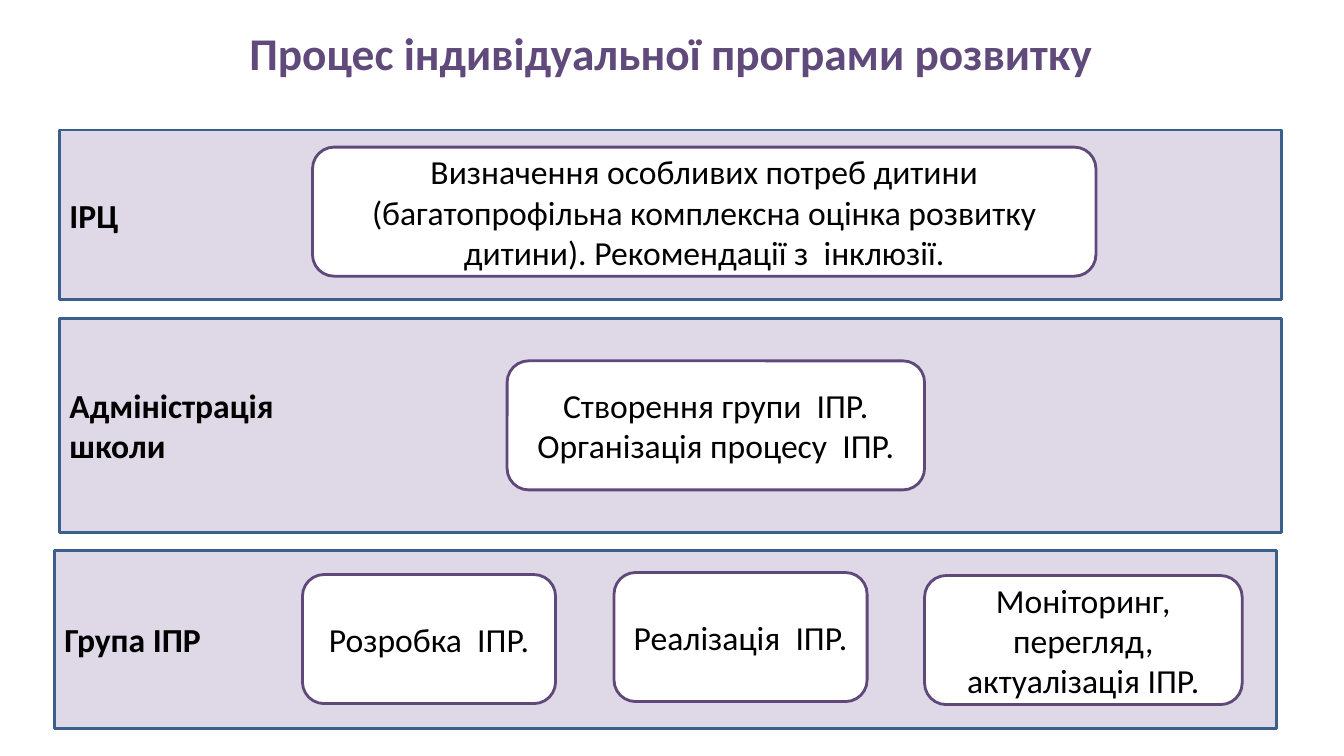
from pptx import Presentation
from pptx import util as u
from pptx.dml import color
from pptx.enum import shapes, text

EMU_PER_PX = 9144
TITLE = "604A7B"
INK = "000000"
BAND_FILL, BAND_LINE = "DFD8E7", "3A5F8C"
STEP_FILL, STEP_LINE = "FFFFFF", "5F497A"
BAND_WIDTH = 1212
STEP_HEIGHT = 128

BANDS = [
    (59, 129, 168, ["ІРЦ"]),
    (59, 316, 212, ["Адміністрація", "школи"]),
    (54, 546, 177, ["Група ІПР"]),
]
STEPS = [
    (310, 146, 777, ["Визначення особливих потреб дитини (багатопрофільна "
                     "комплексна оцінка розвитку дитини). Рекомендації з  інклюзії."]),
    (503, 358, 414, ["Створення групи  ІПР.", "Організація процесу  ІПР."]),
    (300, 570, 251, ["Розробка  ІПР."]),
    (609, 568, 251, ["Реалізація  ІПР."]),
    (917, 571, 315, ["Моніторинг, перегляд, актуалізація ІПР."]),
]


def px(*lengths):
    return [u.Emu(length * EMU_PER_PX) for length in lengths]


def rgb(value):
    return color.RGBColor.from_string(value)


def write(shape, lines, align, **font):
    frame = shape.text_frame
    frame.word_wrap = True
    frame.vertical_anchor = text.MSO_ANCHOR.MIDDLE
    style = {"name": "Calibri", "size": u.Pt(24), "bold": False} | font
    ink = style.pop("ink", INK)
    for index, line in enumerate(lines):
        para = frame.add_paragraph() if index else frame.paragraphs[0]
        para.alignment = align
        span = para.add_run()
        span.text = line
        for key, value in style.items():
            setattr(span.font, key, value)
        span.font.color.rgb = rgb(ink)


def add_panel(page, kind, place, fill, line):
    panel = page.shapes.add_shape(kind, *px(*place))
    panel.shadow.inherit = False
    panel.fill.solid()
    panel.fill.fore_color.rgb = rgb(fill)
    panel.line.color.rgb = rgb(line)
    panel.line.width = u.Pt(2)
    return panel


def add_title(page, title):
    box = page.shapes.add_textbox(*px(99, 25, 1133, 54))
    write(box, [title], text.PP_ALIGN.CENTER, size=u.Pt(32.4), bold=True, ink=TITLE)


def add_band(page, left, top, height, lines):
    band = add_panel(page, shapes.MSO_SHAPE.RECTANGLE,
                     (left, top, BAND_WIDTH, height), BAND_FILL, BAND_LINE)
    write(band, lines, text.PP_ALIGN.LEFT, bold=True)


def add_step(page, left, top, width, lines):
    step = add_panel(page, shapes.MSO_SHAPE.ROUNDED_RECTANGLE,
                     (left, top, width, STEP_HEIGHT), STEP_FILL, STEP_LINE)
    write(step, lines, text.PP_ALIGN.CENTER)


def main():
    deck = Presentation()
    deck.slide_width, deck.slide_height = px(1333, 750)
    page = deck.slides.add_slide(deck.slide_layouts[6])
    add_title(page, "Процес індивідуальної програми розвитку")
    for band in BANDS:
        add_band(page, *band)
    for step in STEPS:
        add_step(page, *step)
    deck.save("out.pptx")


if __name__ == "__main__":
    main()
